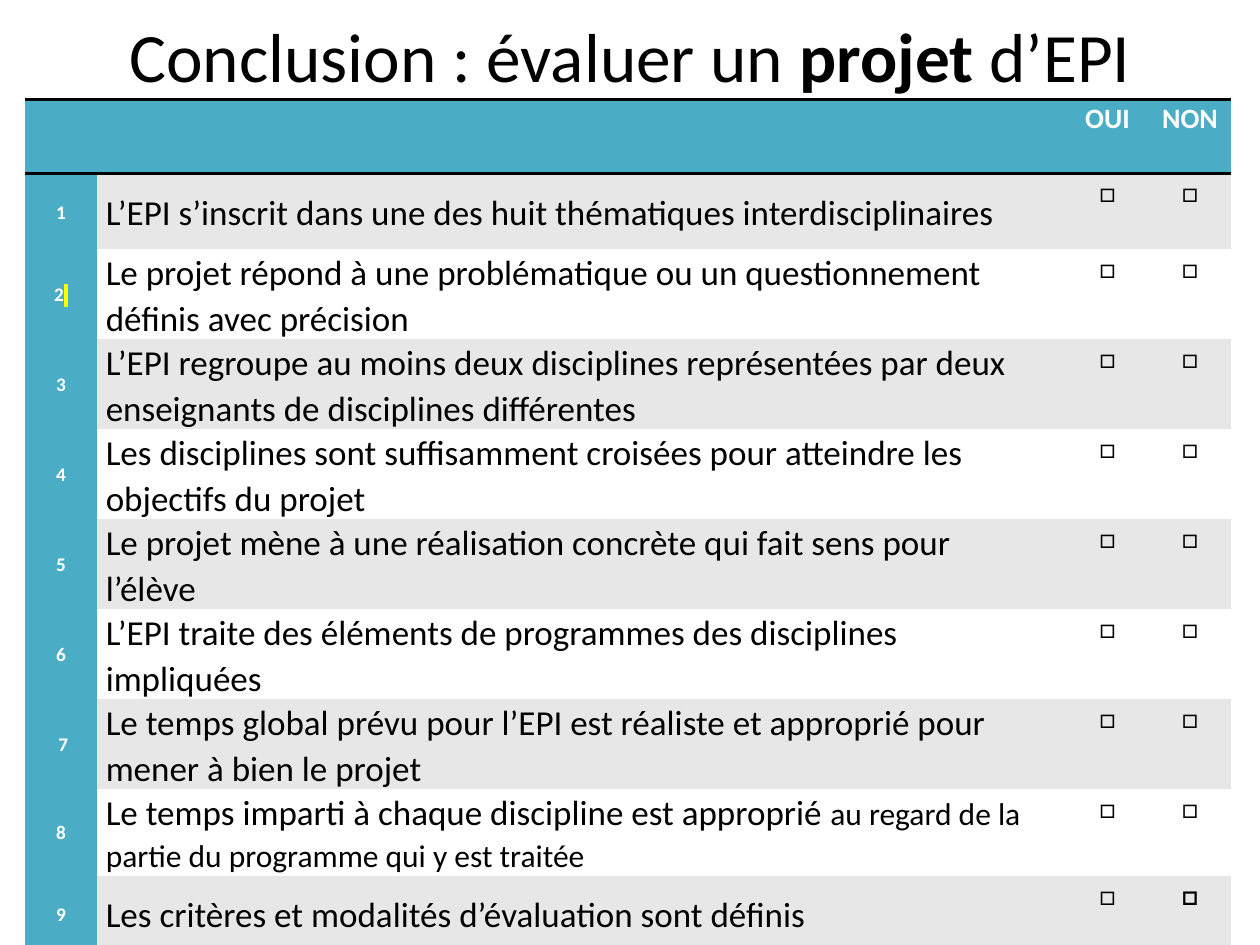
import pptx
import pptx.dml.color
import pptx.enum.text
import pptx.oxml
import pptx.oxml.ns
import pptx.util

Inches, Pt = pptx.util.Inches, pptx.util.Pt
ALIGN = pptx.enum.text.PP_ALIGN
ANCHOR = pptx.enum.text.MSO_ANCHOR
NAMESPACE = pptx.oxml.ns.nsdecls("a")
NO_STYLE = "{2D5ABB26-0587-4C30-8999-92F81FD0307C}"

WIDTH, HEIGHT = 10, 7.5
TEAL, GREY, WHITE, BLACK, YELLOW = "4BACC6", "E7E7E7", "FFFFFF", "000000", "FFFF00"
COLUMNS = [0.57, 7.69, 0.66, 0.65]
HEADER_ROW, SHORT_ROW, TALL_ROW = 0.59, 0.6, 0.69

HEADINGS = ["", "", "OUI", "NON"]
# Each criterion: row height, then its runs as (text, size)
CRITERIA = [
    (SHORT_ROW, [("L’EPI s’inscrit dans une des huit thématiques interdisciplinaires", 20)]),
    (TALL_ROW, [("Le projet répond à une problématique ou un questionnement définis avec précision", 20)]),
    (TALL_ROW, [("L’EPI regroupe au moins deux disciplines représentées par deux "
                 "enseignants de disciplines différentes", 20)]),
    (TALL_ROW, [("Les disciplines sont suffisamment croisées pour atteindre les objectifs du projet", 20)]),
    (SHORT_ROW, [("Le projet mène à une réalisation concrète qui fait sens pour l’élève", 20)]),
    (SHORT_ROW, [("L’EPI traite des éléments de programmes des disciplines impliquées", 20)]),
    (TALL_ROW, [("Le temps global prévu pour l’EPI est réaliste et approprié pour "
                 "mener à bien le projet", 20)]),
    (TALL_ROW, [("Le temps imparti à chaque discipline est approprié ", 20),
                ("au regard de la partie du programme qui y est traitée", 18)]),
    (SHORT_ROW, [("Les critères et modalités d’évaluation sont définis", 20)]),
]
NUMBERS = ["1", "2", "3", "4", "5", "6", " 7", "8", "9"]


def color(value):
    return pptx.dml.color.RGBColor.from_string(value)


def add_run(paragraph, text, size, font_color=BLACK, bold=False):
    run = paragraph.add_run()
    run.text = text
    for name, value in {"size": Pt(size), "name": "Calibri", "bold": bold}.items():
        setattr(run.font, name, value)
    run.font.color.rgb = color(font_color)
    return run


def highlight(run, value):
    mark = pptx.oxml.parse_xml(
        f'<a:highlight {NAMESPACE}><a:srgbClr val="{value}"/></a:highlight>')
    run.font.fill  # the highlight must follow the solid fill
    properties = run._r.get_or_add_rPr()
    properties.find(pptx.oxml.ns.qn("a:solidFill")).addnext(mark)


def add_border(cell, side):
    """Draw a black line on one side: "T" (top) or "B" (bottom)."""
    line = pptx.oxml.parse_xml(
        f'<a:ln{side} {NAMESPACE} w="{Pt(2)}"><a:solidFill>'
        f'<a:srgbClr val="{BLACK}"/></a:solidFill></a:ln{side}>')
    properties = cell._tc.get_or_add_tcPr()
    fill = properties.find(pptx.oxml.ns.qn("a:solidFill"))
    fill.addprevious(line)


def fill_cell(cell, fill, runs=(), align=ALIGN.CENTER, anchor=ANCHOR.MIDDLE, right=0.07):
    margins = {"margin_left": 0.07, "margin_right": right, "margin_top": 0, "margin_bottom": 0}
    for name, value in margins.items():
        setattr(cell, name, Inches(value))
    cell.vertical_anchor = anchor
    cell.fill.solid()
    cell.fill.fore_color.rgb = color(fill)
    paragraph = cell.text_frame.paragraphs[0]
    paragraph.alignment = align
    paragraph.line_spacing = 1.07
    return [add_run(paragraph, *run) for run in runs]


def add_title(slide, left, top, width, height):
    box = slide.shapes.add_textbox(*map(Inches, (left, top, width, height)))
    frame = box.text_frame
    frame.word_wrap = True
    frame.vertical_anchor = ANCHOR.MIDDLE
    paragraph = frame.paragraphs[0]
    paragraph.alignment = ALIGN.CENTER
    for text, bold in (("Conclusion : évaluer un ", False), ("projet", True), (" d’EPI", False)):
        add_run(paragraph, text, 39.6, BLACK, bold)


def add_checklist(slide, left, top):
    heights = [HEADER_ROW] + [height for height, _ in CRITERIA]
    frame = slide.shapes.add_table(
        len(heights), len(COLUMNS), Inches(left), Inches(top),
        Inches(sum(COLUMNS)), Inches(sum(heights)))
    table = frame.table
    table.horz_banding = False
    table._tbl.tblPr.find(pptx.oxml.ns.qn("a:tableStyleId")).text = NO_STYLE
    for column, width in zip(table.columns, COLUMNS):
        column.width = Inches(width)
    for row, height in zip(table.rows, heights):
        row.height = Inches(height)

    for index, heading in enumerate(HEADINGS):
        runs = [(heading, 16, WHITE, True)] if heading else []
        fill_cell(table.cell(0, index), TEAL, runs, anchor=ANCHOR.TOP)

    last = len(CRITERIA)
    for row, (number, (_, criterion)) in enumerate(zip(NUMBERS, CRITERIA), start=1):
        band = GREY if row % 2 else WHITE
        number_runs = [(number, 11, WHITE, True)]
        if row == 2:
            number_runs.append((" ", 11, WHITE, True))
        added = fill_cell(table.cell(row, 0), TEAL, number_runs)
        if row == 2:
            highlight(added[-1], YELLOW)
        fill_cell(table.cell(row, 1), band, criterion, ALIGN.LEFT, right=0.2)
        for column in (2, 3):
            bold = (row, column) == (last, 3)
            fill_cell(table.cell(row, column), band, [("□", 16, BLACK, bold)], anchor=ANCHOR.TOP)

    for row, side in ((0, "T"), (0, "B"), (last, "B")):
        for column in range(len(COLUMNS)):
            add_border(table.cell(row, column), side)


def main():
    presentation = pptx.Presentation()
    presentation.slide_width = Inches(WIDTH)
    presentation.slide_height = Inches(HEIGHT)
    slide = presentation.slides.add_slide(presentation.slide_layouts[6])
    add_title(slide, 0.05 * WIDTH, 0, 0.9 * WIDTH, 0.87)
    add_checklist(slide, 0.02 * WIDTH, 0.79)
    presentation.save("out.pptx")


if __name__ == "__main__":
    main()
